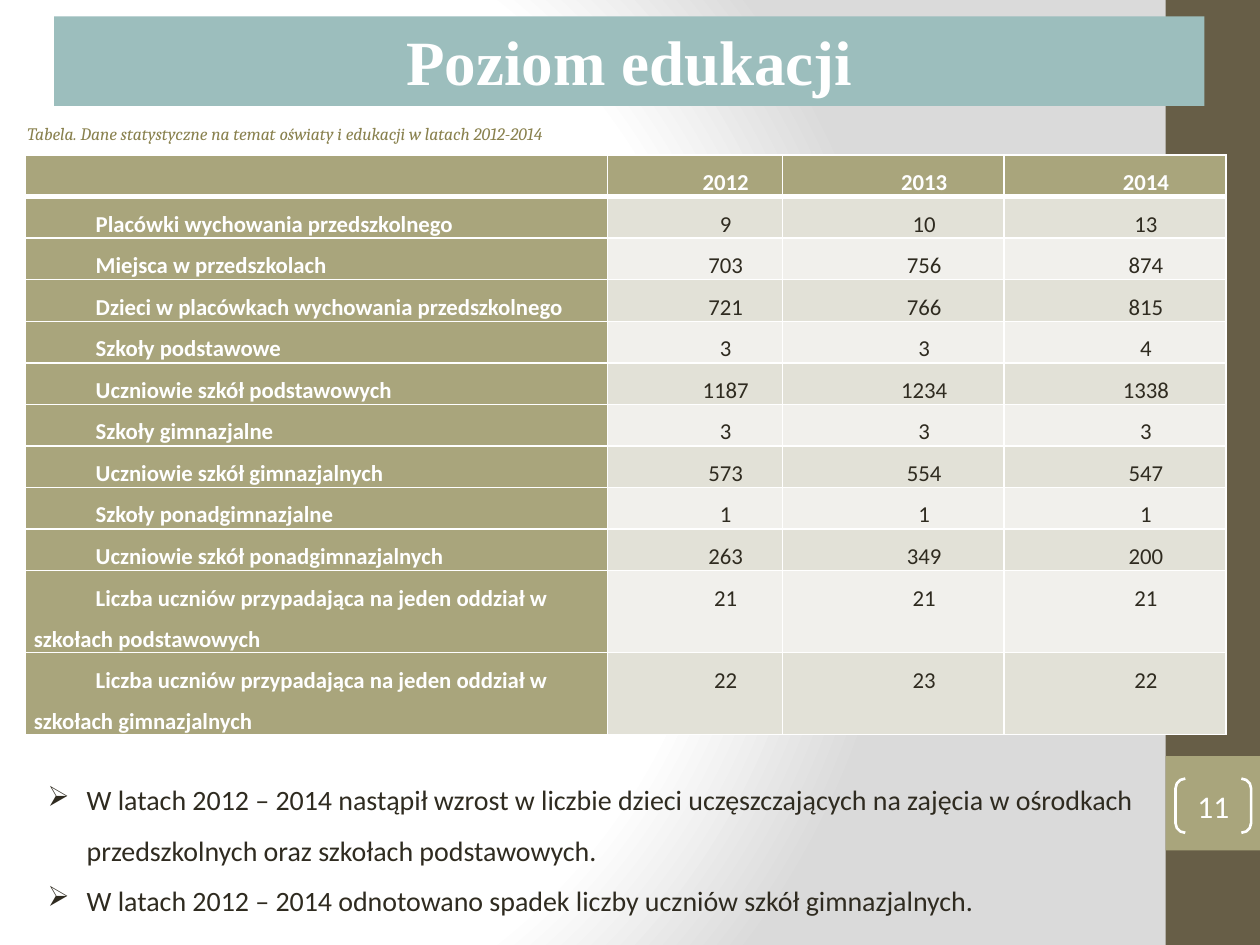
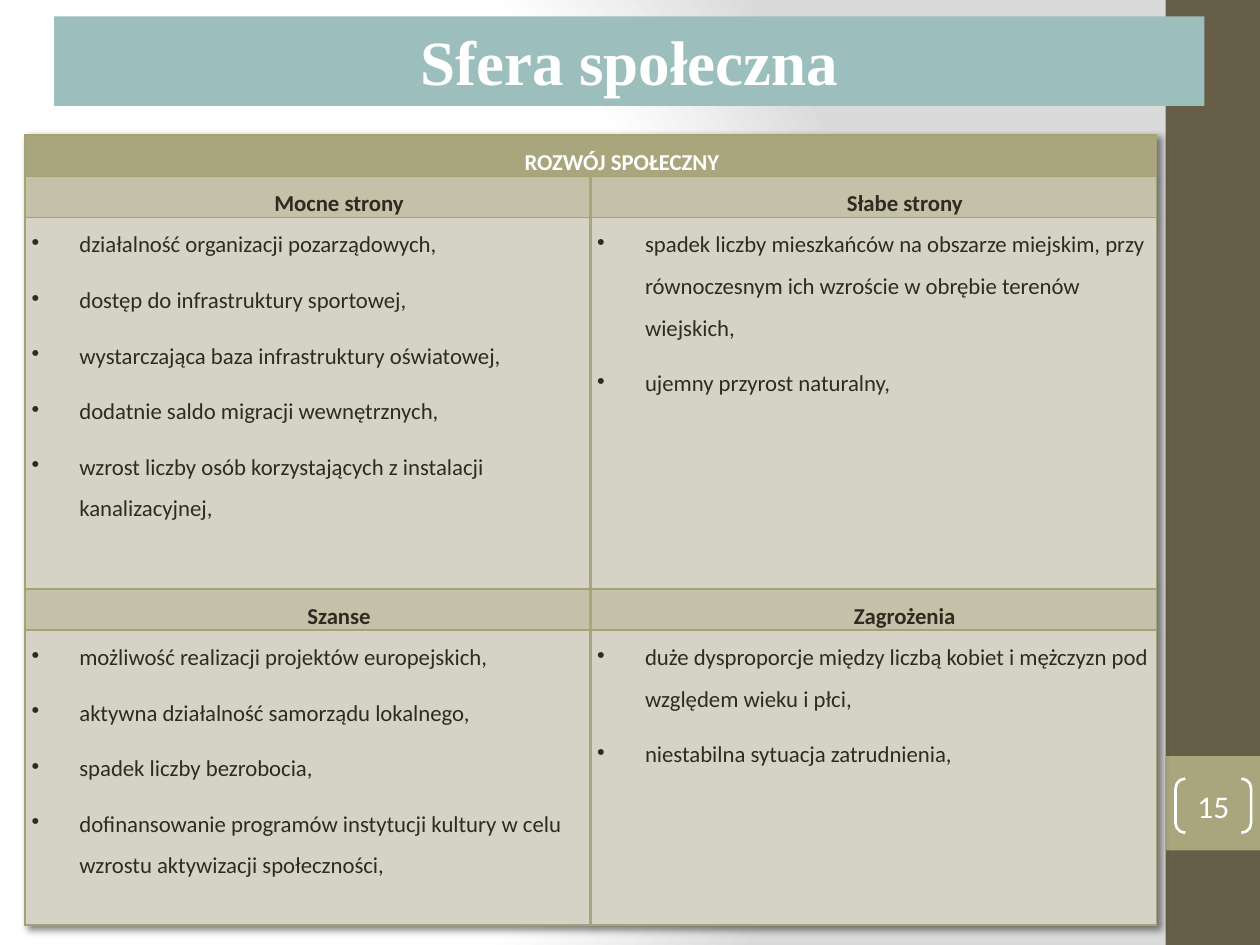
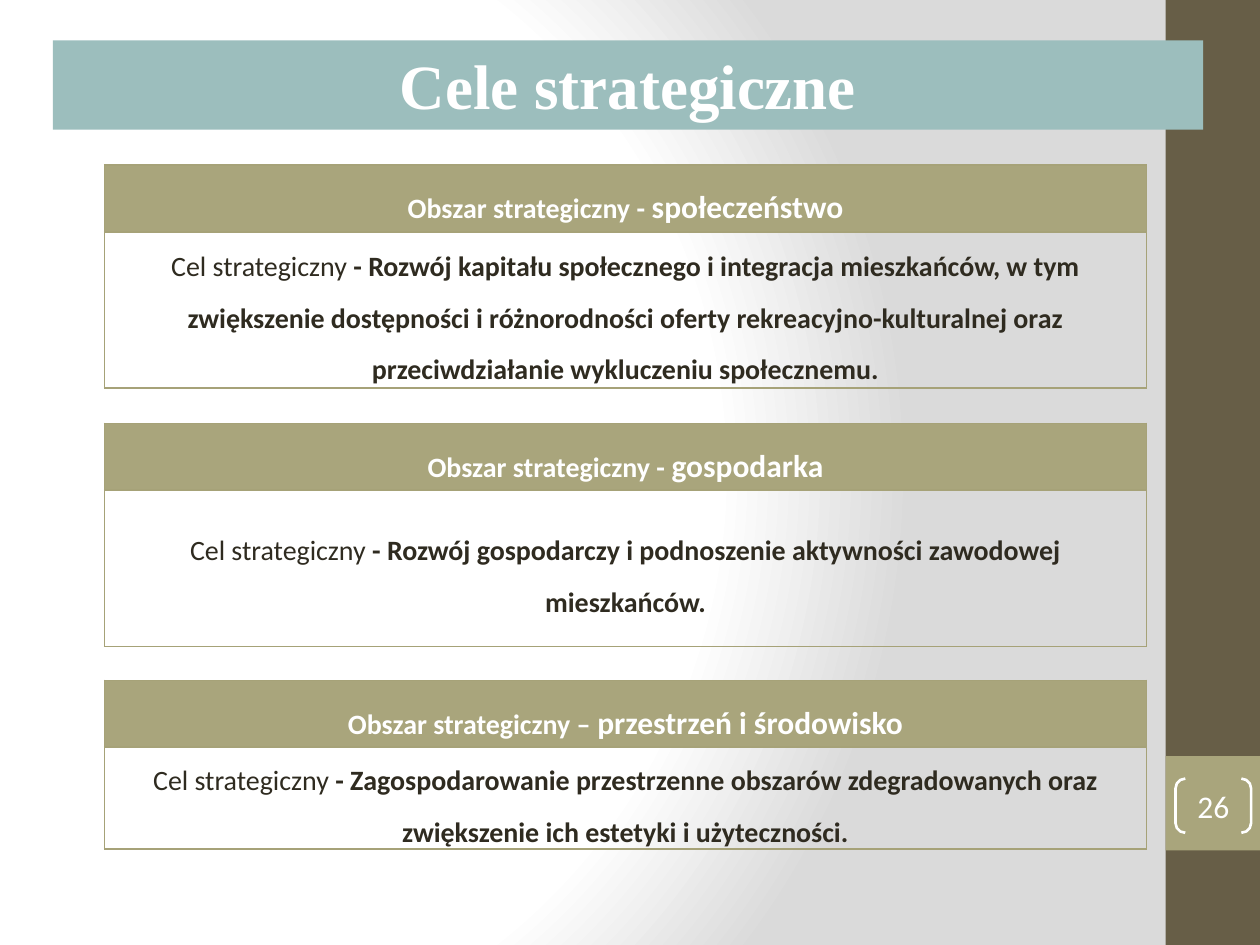
import dataclasses
import typing

import lxml.etree
import pptx
import pptx.dml.color
import pptx.enum.shapes
import pptx.enum.text
import pptx.oxml
import pptx.oxml.ns
import pptx.util

Inches = pptx.util.Inches
Pt = pptx.util.Pt
qn = pptx.oxml.ns.qn
SHAPE = pptx.enum.shapes.MSO_SHAPE
ALIGN = pptx.enum.text.PP_ALIGN
ANCHOR = pptx.enum.text.MSO_ANCHOR

COLORS = {
    "white": "FFFFFF",
    "fade": "DADADA",
    "brown": "675E47",
    "olive": "A9A57C",
    "rule": "A6A278",
    "teal": "9CBEBD",
    "ink": "2F2B20",
    "caption": "89814E",
    "band dark": "E2E1D7",
    "band light": "F1F0EC",
    "swot head": "C3C1A8",
    "swot body": "D5D3C6",
}
FONT = "Calibri"
FIRST_LINE = 0.49
TABLE_TEXT = {"size": 13, "line": 1.5}
CENTERED = {**TABLE_TEXT, "align": ALIGN.CENTER, "indent": FIRST_LINE}


@dataclasses.dataclass(frozen=True)
class Box:
    left: float
    top: float
    width: float
    height: float

    def lengths(self) -> tuple[int, ...]:
        return tuple(Inches(side) for side in dataclasses.astuple(self))


@dataclasses.dataclass(frozen=True)
class Border:
    color: str
    width: float = 1


@dataclasses.dataclass(frozen=True)
class Goal:
    top: float
    body_height: float
    dash: str
    area: str
    aim: str


@dataclasses.dataclass(frozen=True)
class SwotPair:
    heads: tuple[str, str]
    points: tuple[tuple[str, ...], tuple[str, ...]]


EDUCATION = (
    ("", "2012", "2013", "2014"),
    ("Placówki wychowania przedszkolnego", "9", "10", "13"),
    ("Miejsca w przedszkolach", "703", "756", "874"),
    ("Dzieci w placówkach wychowania przedszkolnego", "721", "766", "815"),
    ("Szkoły podstawowe", "3", "3", "4"),
    ("Uczniowie szkół podstawowych", "1187", "1234", "1338"),
    ("Szkoły gimnazjalne", "3", "3", "3"),
    ("Uczniowie szkół gimnazjalnych", "573", "554", "547"),
    ("Szkoły ponadgimnazjalne", "1", "1", "1"),
    ("Uczniowie szkół ponadgimnazjalnych", "263", "349", "200"),
    ("Liczba uczniów przypadająca na jeden oddział w szkołach podstawowych", "21", "21", "21"),
    ("Liczba uczniów przypadająca na jeden oddział w szkołach gimnazjalnych", "22", "23", "22"),
)
FINDINGS = (
    "W latach 2012 – 2014 nastąpił wzrost w liczbie dzieci uczęszczających na zajęcia "
    "w ośrodkach przedszkolnych oraz szkołach podstawowych.",
    "W latach 2012 – 2014 odnotowano spadek liczby uczniów szkół gimnazjalnych.",
)
SWOT = (
    SwotPair(
        ("Mocne strony", "Słabe strony"),
        (
            (
                "działalność organizacji pozarządowych,",
                "dostęp do infrastruktury sportowej,",
                "wystarczająca baza infrastruktury oświatowej,",
                "dodatnie saldo migracji wewnętrznych,",
                "wzrost liczby osób korzystających z instalacji kanalizacyjnej,",
            ),
            (
                "spadek liczby mieszkańców na obszarze miejskim, przy równoczesnym "
                "ich wzroście w obrębie terenów wiejskich,",
                "ujemny przyrost naturalny,",
            ),
        ),
    ),
    SwotPair(
        ("Szanse", "Zagrożenia"),
        (
            (
                "możliwość realizacji projektów europejskich,",
                "aktywna działalność samorządu lokalnego,",
                "spadek liczby bezrobocia,",
                "dofinansowanie programów instytucji kultury w celu wzrostu "
                "aktywizacji społeczności,",
            ),
            (
                "duże dysproporcje między liczbą kobiet i mężczyzn pod względem wieku i płci,",
                "niestabilna sytuacja zatrudnienia,",
            ),
        ),
    ),
)
GOALS = (
    Goal(1.31, 1.24, "-", "społeczeństwo",
         "Rozwój kapitału społecznego i integracja mieszkańców, w tym zwiększenie dostępności "
         "i różnorodności oferty rekreacyjno-kulturalnej oraz przeciwdziałanie wykluczeniu "
         "społecznemu."),
    Goal(3.36, 1.24, "-", "gospodarka",
         "Rozwój gospodarczy i podnoszenie aktywności zawodowej mieszkańców."),
    Goal(5.4, 0.81, "–", "przestrzeń i środowisko",
         "Zagospodarowanie przestrzenne obszarów zdegradowanych oraz zwiększenie ich estetyki "
         "i użyteczności."),
)


def rgb(name: str) -> pptx.dml.color.RGBColor:
    return pptx.dml.color.RGBColor.from_string(COLORS[name])


def write_text(para, text: str, *, size: float, color: str = "ink", font: str = FONT,
               bold: bool = False, italic: bool = False, align=ALIGN.LEFT, line: float = 1,
               after: float = 0, margin: float = 0, indent: float = 0, bullet: str = "") -> None:
    para.alignment = align
    para.line_spacing = line
    para.space_after = Pt(after)
    properties = para._p.get_or_add_pPr()
    properties.set("marL", str(Inches(margin)))
    properties.set("indent", str(Inches(indent)))
    if bullet:
        lxml.etree.SubElement(properties, qn("a:buChar")).set("char", bullet)
    span = para.add_run()
    span.text = text
    span.font.size = Pt(size)
    span.font.name = font
    span.font.bold = bold
    span.font.italic = italic
    span.font.color.rgb = rgb(color)


def write_list(frame, items: typing.Sequence[str], **text_format) -> None:
    for index, item in enumerate(items):
        para = frame.add_paragraph() if index else frame.paragraphs[0]
        write_text(para, item, **text_format)


def add_block(page, kind, box: Box, fill: str = "", line: str = ""):
    block = page.shapes.add_shape(kind, *box.lengths())
    block.shadow.inherit = False
    if fill:
        block.fill.solid()
        block.fill.fore_color.rgb = rgb(fill)
    else:
        block.fill.background()
    if line:
        block.line.color.rgb = rgb(line)
        block.line.width = Pt(1.5)
    else:
        block.line.fill.background()
    return block


def add_text_box(page, box: Box):
    frame = page.shapes.add_textbox(*box.lengths()).text_frame
    frame.word_wrap = True
    return frame


def paint_background(page) -> None:
    page.background.fill.gradient()
    gradient = page.element.find(".//" + qn("a:gradFill"))
    stops = "".join(
        f'<a:gs pos="{position * 1000}"><a:srgbClr val="{COLORS[color]}"/></a:gs>'
        for position, color in ((0, "white"), (75, "white"), (100, "fade"))
    )
    gradient.getparent().replace(gradient, pptx.oxml.parse_xml(
        f'<a:gradFill {pptx.oxml.ns.nsdecls("a")} rotWithShape="1"><a:gsLst>{stops}</a:gsLst>'
        '<a:path path="circle"><a:fillToRect l="20000" t="50000" r="100000" b="50000"/></a:path>'
        '</a:gradFill>'
    ))


def add_page(deck, title: str, number: int, title_left: float = 0.43, title_top: float = 0.13):
    page = deck.slides.add_slide(deck.slide_layouts[6])
    paint_background(page)
    add_block(page, SHAPE.RECTANGLE, Box(9.25, 0, 0.75, 7.5), "brown")
    add_block(page, SHAPE.RECTANGLE, Box(9.25, 6, 0.75, 0.75), "olive")
    bracket = add_block(page, SHAPE.DOUBLE_BRACKET, Box(9.33, 6.18, 0.6, 0.43), line="white")
    bracket.adjustments[0] = 0.18
    frame = bracket.text_frame
    frame.margin_left = frame.margin_right = frame.margin_top = frame.margin_bottom = 0
    write_text(frame.paragraphs[0], str(number), size=18, color="white", align=ALIGN.CENTER)
    banner = add_block(page, SHAPE.RECTANGLE, Box(title_left, title_top, 9.13, 0.71), "teal")
    banner.text_frame.vertical_anchor = ANCHOR.TOP
    write_text(banner.text_frame.paragraphs[0], title, size=36, color="white",
               font="Times New Roman", bold=True, align=ALIGN.CENTER)
    return page


def add_grid(page, left: float, top: float, columns: typing.Sequence[float],
             rows: typing.Sequence[float]):
    box = Box(left, top, sum(columns), sum(rows))
    table = page.shapes.add_table(len(rows), len(columns), *box.lengths()).table
    table.first_row = table.horz_banding = False
    for column, width in zip(table.columns, columns):
        column.width = Inches(width)
    for row, height in zip(table.rows, rows):
        row.height = Inches(height)
    return table


def style_cell(cell, fill: str, border: Border, side_margin: float = 0.07,
               anchor=ANCHOR.TOP, **sides: Border) -> None:
    cell.margin_left = cell.margin_right = Inches(side_margin)
    cell.margin_top = cell.margin_bottom = 0
    cell.vertical_anchor = anchor
    if fill:
        cell.fill.solid()
        cell.fill.fore_color.rgb = rgb(fill)
    else:
        cell.fill.background()
    properties = cell._tc.get_or_add_tcPr()
    for index, side in enumerate("LRTB"):
        edge = sides.get(side, border)
        properties.insert(index, pptx.oxml.parse_xml(
            f'<a:ln{side} {pptx.oxml.ns.nsdecls("a")} w="{Pt(edge.width)}"><a:solidFill>'
            f'<a:srgbClr val="{COLORS[edge.color]}"/></a:solidFill></a:ln{side}>'
        ))


def add_table_shadow(table) -> None:
    table._tbl.tblPr.insert(0, pptx.oxml.parse_xml(
        f'<a:effectLst {pptx.oxml.ns.nsdecls("a")}>'
        f'<a:outerShdw blurRad="{Pt(4)}" dist="{Pt(3)}" dir="2700000" algn="tl" rotWithShape="0">'
        '<a:srgbClr val="000000"><a:alpha val="50000"/></a:srgbClr></a:outerShdw></a:effectLst>'
    ))


def build_education(deck) -> None:
    page = add_page(deck, "Poziom edukacji", 11)
    caption = add_text_box(page, Box(0.12, 0.84, 6.77, 0.35))
    write_text(caption.paragraphs[0],
               "Tabela. Dane statystyczne na temat oświaty i edukacji w latach 2012-2014",
               size=10, color="caption", font="Cambria", italic=True, line=1.5,
               align=ALIGN.JUSTIFY)
    table = add_grid(page, 0.2, 1.23, (4.62, 1.39, 1.76, 1.76), [0.33] * 10 + [0.65] * 2)
    white, thick = Border("white"), Border("white", 3)
    for row, values in enumerate(EDUCATION):
        sides = {0: {"B": thick}, 1: {"T": thick}}.get(row, {})
        for column, value in enumerate(values):
            heading = row == 0 or column == 0
            band = "band dark" if row % 2 else "band light"
            cell = table.cell(row, column)
            style_cell(cell, "olive" if heading else band, white, **sides)
            text_format = {**CENTERED, "align": ALIGN.CENTER if column else ALIGN.LEFT}
            write_text(cell.text_frame.paragraphs[0], value, bold=heading,
                       color="white" if heading else "ink", **text_format)
    findings = add_text_box(page, Box(0.28, 6.03, 8.98, 1.31))
    write_list(findings, FINDINGS, size=16, line=1.5, margin=0.31, indent=-0.31, bullet="➢")


def build_swot(deck) -> None:
    page = add_page(deck, "Sfera społeczna", 15)
    table = add_grid(page, 0.2, 1.07, (4.49, 4.49), (0.33, 0.26, 2.95, 0.27, 2.34))
    add_table_shadow(table)
    rule, divider = Border("rule"), Border("olive", 2)
    table.cell(0, 0).merge(table.cell(0, 1))
    for column in range(2):
        style_cell(table.cell(0, column), "olive", rule, 0.05, ANCHOR.MIDDLE)
    write_text(table.cell(0, 0).text_frame.paragraphs[0], "ROZWÓJ SPOŁECZNY",
               color="white", bold=True, **CENTERED)
    for index, pair in enumerate(SWOT):
        for column, (head, points) in enumerate(zip(pair.heads, pair.points)):
            sides = {"L" if column else "R": divider}
            head_cell = table.cell(2 * index + 1, column)
            style_cell(head_cell, "swot head", rule, 0.05, **sides)
            write_text(head_cell.text_frame.paragraphs[0], head, bold=True, after=8, **CENTERED)
            body_cell = table.cell(2 * index + 2, column)
            style_cell(body_cell, "swot body", rule, 0.05, **sides)
            write_list(body_cell.text_frame, points, after=8, margin=0.38, indent=-0.38,
                       bullet="•", **TABLE_TEXT)


def build_goals(deck) -> None:
    page = add_page(deck, "Cele strategiczne", 26, 0.42, 0.32)
    layout = {"align": ALIGN.CENTER, "line": 1.5}
    for goal in GOALS:
        table = add_grid(page, 0.83, goal.top, (8.27,), (0.53, goal.body_height))
        head, body = table.cell(0, 0), table.cell(1, 0)
        for cell, fill in ((head, "olive"), (body, "")):
            style_cell(cell, fill, Border("rule"), anchor=ANCHOR.MIDDLE)
        para = head.text_frame.paragraphs[0]
        write_text(para, f"Obszar strategiczny {goal.dash} ", size=16, color="white",
                   bold=True, **layout)
        write_text(para, goal.area, size=18, color="white", bold=True, **layout)
        para = body.text_frame.paragraphs[0]
        write_text(para, "Cel strategiczny ", size=16, **layout)
        write_text(para, f"- {goal.aim}", size=16, bold=True, **layout)


def main() -> None:
    deck = pptx.Presentation()
    deck.slide_width, deck.slide_height = Inches(10), Inches(7.5)
    build_education(deck)
    build_swot(deck)
    build_goals(deck)
    deck.save("out.pptx")


if __name__ == "__main__":
    main()
